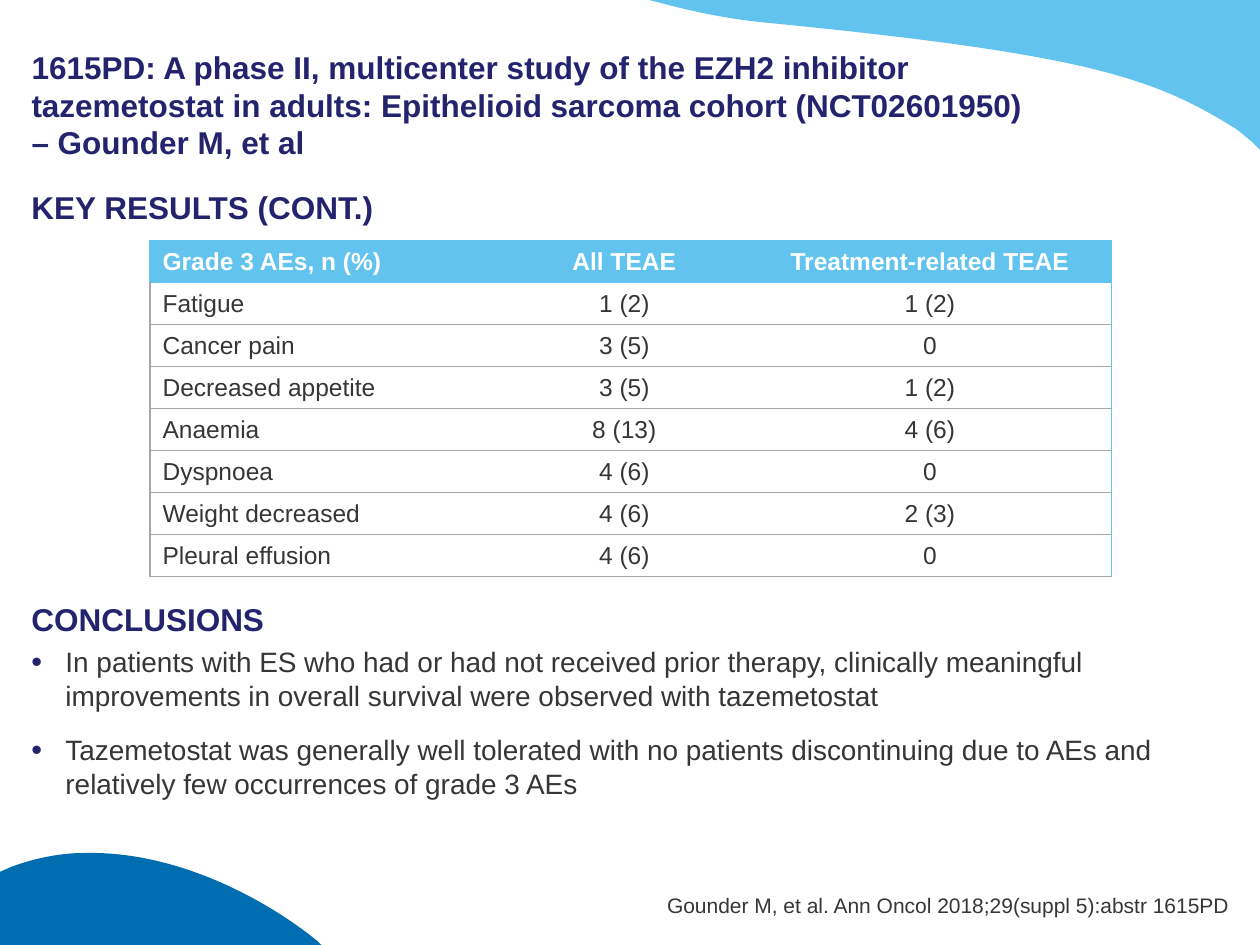
import pptx
import pptx.dml.color
import pptx.enum.text
import pptx.oxml
import pptx.oxml.ns
import pptx.util
from pptx.util import Inches

RGB = pptx.dml.color.RGBColor
ALIGN = pptx.enum.text.PP_ALIGN
ANCHOR = pptx.enum.text.MSO_ANCHOR
SIZE = pptx.enum.text.MSO_AUTO_SIZE
SPACE = pptx.oxml.ns.nsdecls("a")
NAVY = RGB(0x23, 0x24, 0x6D)
SKY = RGB(0x62, 0xC4, 0xEE)
BLUE = RGB(0x00, 0x6D, 0xB0)
TEXT = RGB(0x36, 0x36, 0x36)
GRAY = RGB(0xA6, 0xA6, 0xA6)
WHITE = RGB(0xFF, 0xFF, 0xFF)


def style(para, size, color, bold=False, align=ALIGN.LEFT):
    font = para.font
    font.name, font.size, font.bold = "Arial", pptx.util.Pt(size), bold
    font.color.rgb = color
    para.alignment = align


deck = pptx.Presentation()
deck.slide_width, deck.slide_height = Inches(10), Inches(7.5)
slide = deck.slides.add_slide(deck.slide_layouts[5])
shapes = slide.shapes

# Corner waves: steps of two numbers are lines, steps of six are Bezier curves
top = [(5.15, 0), (10, 0), (10, 1.19), (9.93, 1.12),
       (9.89, 1.09, 9.86, 1.06, 9.82, 1.03),
       (9.17, 0.62, 8.64, 0.43, 6.08, 0.18),
       (5.77, 0.15, 5.49, 0.09, 5.23, 0.02)]
base = [(0.67, 6.77), (1.45, 6.75, 2.18, 7.19, 2.52, 7.47), (2.55, 7.5),
        (0, 7.5), (0, 6.92), (0.09, 6.88), (0.28, 6.81, 0.48, 6.77, 0.67, 6.77)]
for steps, color in ((top, SKY), (base, BLUE)):
    ends = [(Inches(step[-2]), Inches(step[-1])) for step in steps]
    pen = shapes.build_freeform(*ends[0])
    pen.add_line_segments(ends[1:], close=True)
    wave = pen.convert_to_shape()
    wave.shadow.inherit = False
    wave.fill.solid()
    wave.fill.fore_color.rgb = color
    wave.line.fill.background()
    edges = list(wave._element.iter(pptx.oxml.ns.qn("a:lnTo")))
    for edge, step in zip(edges, steps[1:]):
        if len(step) == 6:
            points = "".join(
                f'<a:pt x="{Inches(x) - wave.left}" y="{Inches(y) - wave.top}"/>'
                for x, y in zip(step[::2], step[1::2]))
            edge.getparent().replace(edge, pptx.oxml.parse_xml(
                f"<a:cubicBezTo {SPACE}>{points}</a:cubicBezTo>"))

# Title
title = shapes.title
title.left, title.top = Inches(0.25), Inches(0.25)
title.width, title.height = Inches(8.1), Inches(1.03)
frame = title.text_frame
frame.word_wrap, frame.auto_size = True, SIZE.NONE
frame.vertical_anchor = ANCHOR.BOTTOM
frame.margin_left = frame.margin_right = frame.margin_bottom = 0
frame.margin_top = Inches(0.05)
frame.text = ("1615PD: A phase II, multicenter study of the EZH2 inhibitor tazemetostat "
              "in adults: Epithelioid sarcoma cohort (NCT02601950)\v– Gounder M, et al")
style(frame.paragraphs[0], 18, NAVY, True)

# Headings and conclusions; the table fills the space before the second heading
body = shapes.add_textbox(Inches(0.25), Inches(1.44), Inches(9.5), Inches(5.81))
frame = body.text_frame
frame.word_wrap = True
frame.margin_left = frame.margin_right = 0
frame.margin_top = frame.margin_bottom = Inches(0.05)
lines = [
    ("KEY RESULTS (CONT.)", 0, False),
    ("CONCLUSIONS", 210, False),
    ("In patients with ES who had or had not received prior therapy, clinically "
     "meaningful improvements in overall survival were observed with tazemetostat", 0, True),
    ("Tazemetostat was generally well tolerated with no patients discontinuing due "
     "to AEs and relatively few occurrences of grade 3 AEs", 0, True),
]
for i, (words, before, bullet) in enumerate(lines):
    para = frame.add_paragraph() if i else frame.paragraphs[0]
    para.text = words
    para.space_before = pptx.util.Pt(before)
    para.space_after = pptx.util.Pt(12 if bullet else 4)
    style(para, 16 if bullet else 18, TEXT if bullet else NAVY, not bullet)
    if bullet:
        props = para._p.get_or_add_pPr()
        props.set("marL", str(Inches(0.27)))
        props.set("indent", str(-Inches(0.27)))
        marks = (f'<a:buClr {SPACE}><a:srgbClr val="{NAVY}"/></a:buClr>',
                 f'<a:buSzPct {SPACE} val="110000"/>',
                 f'<a:buFont {SPACE} typeface="Arial"/>',
                 f'<a:buChar {SPACE} char="•"/>')
        for spot, mark in enumerate(marks, 2):
            props.insert(spot, pptx.oxml.parse_xml(mark))

# Adverse events
rows = [
    ("Grade 3 AEs, n (%)", "All TEAE", "Treatment-related TEAE"),
    ("Fatigue", "1 (2)", "1 (2)"),
    ("Cancer pain", "3 (5)", "0"),
    ("Decreased appetite", "3 (5)", "1 (2)"),
    ("Anaemia", "8 (13)", "4 (6)"),
    ("Dyspnoea", "4 (6)", "0"),
    ("Weight decreased", "4 (6)", "2 (3)"),
    ("Pleural effusion", "4 (6)", "0"),
]
height = Inches(2.67)
table = shapes.add_table(len(rows), 3, Inches(1.19), Inches(1.91),
                         Inches(7.63), height).table
for col, width in zip(table.columns, (2.78, 1.97, 2.88)):
    col.width = Inches(width)
for r, row in enumerate(rows):
    table.rows[r].height = height // len(rows)
    head = r == 0
    for c, words in enumerate(row):
        cell = table.cell(r, c)
        cell.text = words
        cell.margin_top = cell.margin_bottom = Inches(0.04)
        cell.vertical_anchor = ANCHOR.MIDDLE
        cell.fill.solid()
        cell.fill.fore_color.rgb = SKY if head else WHITE
        style(cell.text_frame.paragraphs[0], 14, WHITE if head else TEXT, head,
              ALIGN.CENTER if c else ALIGN.LEFT)
        edges = {"L": None if c else SKY if head else GRAY,
                 "R": SKY if c == 2 else None,
                 "T": SKY if r < 2 else GRAY,
                 "B": SKY if head else GRAY}
        props = cell._tc.get_or_add_tcPr()
        for spot, (side, color) in enumerate(edges.items()):
            paint = (f'<a:solidFill><a:srgbClr val="{color}"/></a:solidFill>'
                     if color else "<a:noFill/>")
            props.insert(spot, pptx.oxml.parse_xml(
                f'<a:ln{side} {SPACE} w="9525">{paint}</a:ln{side}>'))

# Citation
cite = shapes.add_textbox(Inches(5.26), Inches(7.08), Inches(4.5), Inches(0.2))
frame = cite.text_frame
frame.word_wrap, frame.auto_size = False, SIZE.SHAPE_TO_FIT_TEXT
frame.vertical_anchor = ANCHOR.BOTTOM
frame.margin_left = frame.margin_right = frame.margin_top = frame.margin_bottom = 0
frame.text = "Gounder M, et al. Ann Oncol 2018;29(suppl 5):abstr 1615PD"
style(frame.paragraphs[0], 12, TEXT, align=ALIGN.RIGHT)

deck.save("out.pptx")
